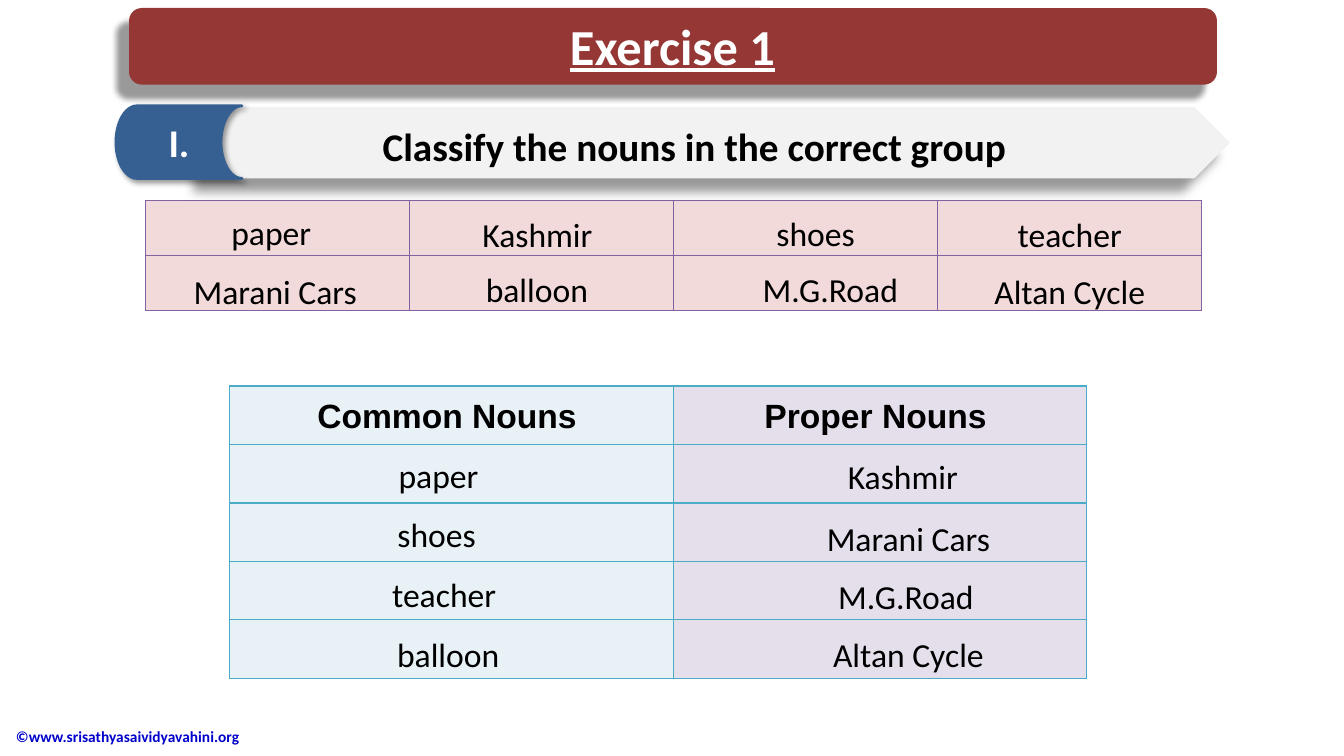
from lxml.etree import SubElement
from pptx import Presentation
from pptx.dml.color import RGBColor
from pptx.enum.shapes import MSO_SHAPE
from pptx.enum.text import MSO_ANCHOR, PP_ALIGN
from pptx.oxml.ns import qn
from pptx.util import Inches, Pt


def color(value):
    return RGBColor.from_string(value)


def write(shape, text, size, hue="000000", bold=False, align=PP_ALIGN.CENTER,
          anchor=MSO_ANCHOR.TOP, font="Calibri"):
    frame = shape.text_frame
    frame.text = text
    frame.word_wrap = True
    frame.vertical_anchor = anchor
    para = frame.paragraphs[0]
    para.alignment = align
    face = para.runs[0].font
    face.name, face.size, face.bold = font, Pt(size), bold
    face.color.rgb = color(hue)
    return para


def label(slide, box, text, size, **look):
    area = slide.shapes.add_textbox(*map(Inches, box))
    return write(area, text, size, **look)


def block(slide, kind, box, fill, blur, dist, angle):
    shape = slide.shapes.add_shape(kind, *map(Inches, box))
    shape.fill.solid()
    shape.fill.fore_color.rgb = color(fill)
    shape.line.fill.background()
    # Soft shadow
    shape.shadow.inherit = False
    effects = shape.element.spPr.find(qn("a:effectLst"))
    shade = SubElement(effects, qn("a:outerShdw"), blurRad=str(Pt(blur)),
                       dist=str(Pt(dist)), dir=str(angle * 60000),
                       algn="ctr", rotWithShape="0")
    tint = SubElement(shade, qn("a:srgbClr"), val="000000")
    SubElement(tint, qn("a:alpha"), val="40000")
    return shape


def border(cell, hue):
    props = cell._tc.get_or_add_tcPr()
    for index, side in enumerate(("a:lnL", "a:lnR", "a:lnT", "a:lnB")):
        line = props.makeelement(qn(side), {"w": str(Pt(1))})
        fill = SubElement(line, qn("a:solidFill"))
        SubElement(fill, qn("a:srgbClr"), val=hue)
        props.insert(index, line)


def grid(slide, left, top, widths, height, count, fills, edge):
    box = (left, top, sum(widths), height * count)
    frame = slide.shapes.add_table(count, len(widths), *map(Inches, box))
    table = frame.table
    table.first_row = table.horz_banding = False
    for row in table.rows:
        row.height = Inches(height)
        for cell, fill in zip(row.cells, fills):
            cell.fill.solid()
            cell.fill.fore_color.rgb = color(fill)
            border(cell, edge)
    for column, width in zip(table.columns, widths):
        column.width = Inches(width)
    return table


def words(slide, left, top, items):
    # Each word: text, offset across, offset down, width
    for text, across, down, width in items:
        label(slide, (left + across, top + down, width, 0.5), text, 24)


def banner(slide, left, top, width, height):
    bar = block(slide, MSO_SHAPE.ROUNDED_RECTANGLE,
                (left, top, width, height), "953734", 4, 13, 135)
    title = slide.shapes.title
    title.element.addprevious(bar.element)
    title.left, title.top = Inches(left + 0.31), Inches(top + 0.01)
    title.width, title.height = Inches(width - 0.63), Inches(height - 0.05)
    para = write(title, "Exercise 1", 36, "FFFFFF", True,
                 anchor=MSO_ANCHOR.MIDDLE)
    para.runs[0].font.underline = True


def task(slide, left, top, width, height):
    block(slide, MSO_SHAPE.PENTAGON,
          (left + 0.89, top + 0.01, width - 0.89, height - 0.01),
          "F2F2F2", 8, 13, 135)
    badge = block(slide, MSO_SHAPE.FLOWCHART_STORED_DATA,
                  (left, top, 1.25, height), "366092", 4, 3, 45)
    badge.line.color.rgb = color("366092")
    badge.line.width = Pt(2)
    write(badge, "I.", 28, "FFFFFF", True, anchor=MSO_ANCHOR.MIDDLE)
    para = label(slide, (left + 1.81, top + 0.04, 7.85, 0.61),
                 "Classify the nouns in the correct group", 28, bold=True)
    para.line_spacing = 1.15


def bank(slide, left, top):
    grid(slide, left, top, [2.62] * 4, 0.545, 2, ["F2DADA"] * 4, "8064A2")
    words(slide, left, top, [
        ("paper", 0.74, 0.06, 1.02), ("Kashmir", 3.18, 0.08, 1.42),
        ("shoes", 5.94, 0.07, 1.42), ("teacher", 8.46, 0.08, 1.42),
        ("Marani Cars", 0.29, 0.65, 2), ("balloon", 2.94, 0.63, 1.89),
        ("M.G.Road", 6.01, 0.63, 1.57), ("Altan Cycle", 8.17, 0.65, 2)])


def answers(slide, left, top):
    table = grid(slide, left, top, [4.4, 4.1], 0.58, 5,
                 ["E8F1F5", "E5DFEC"], "4BACC6")
    for cell, text in zip(table.rows[0].cells,
                          ("Common Nouns ", "Proper Nouns ")):
        cell.margin_left = cell.margin_right = Inches(0.07)
        cell.margin_top = cell.margin_bottom = Inches(0.06)
        para = write(cell, text, 24, bold=True, anchor=MSO_ANCHOR.MIDDLE,
                     font="Arial")
        para.line_spacing = 1.15
    words(slide, left, top, [
        ("paper", 1.5, 0.63, 1.14), ("Kashmir", 6.0, 0.64, 1.35),
        ("shoes", 1.41, 1.22, 1.28), ("Marani Cars", 5.73, 1.26, 2),
        ("teacher", 1.45, 1.81, 1.35), ("M.G.Road", 5.88, 1.83, 1.65),
        ("balloon", 1.26, 2.41, 1.81), ("Altan Cycle", 5.73, 2.41, 2)])


def main():
    deck = Presentation()
    deck.slide_width, deck.slide_height = Inches(13.33), Inches(7.5)
    slide = deck.slides.add_slide(deck.slide_layouts[5])
    # Copyright line
    label(slide, (0.06, 7.1, 3.53, 0.41), "©www.srisathyasaividyavahini.org",
          11, hue="0000CC", bold=True, align=PP_ALIGN.LEFT,
          anchor=MSO_ANCHOR.MIDDLE)
    # Word bank and answer table
    bank(slide, 1.44, 1.99)
    answers(slide, 2.28, 3.83)
    # Heading and task
    task(slide, 1.15, 1.05, 11.05, 0.72)
    banner(slide, 1.28, 0.08, 10.79, 0.76)
    deck.save("out.pptx")


if __name__ == "__main__":
    main()
